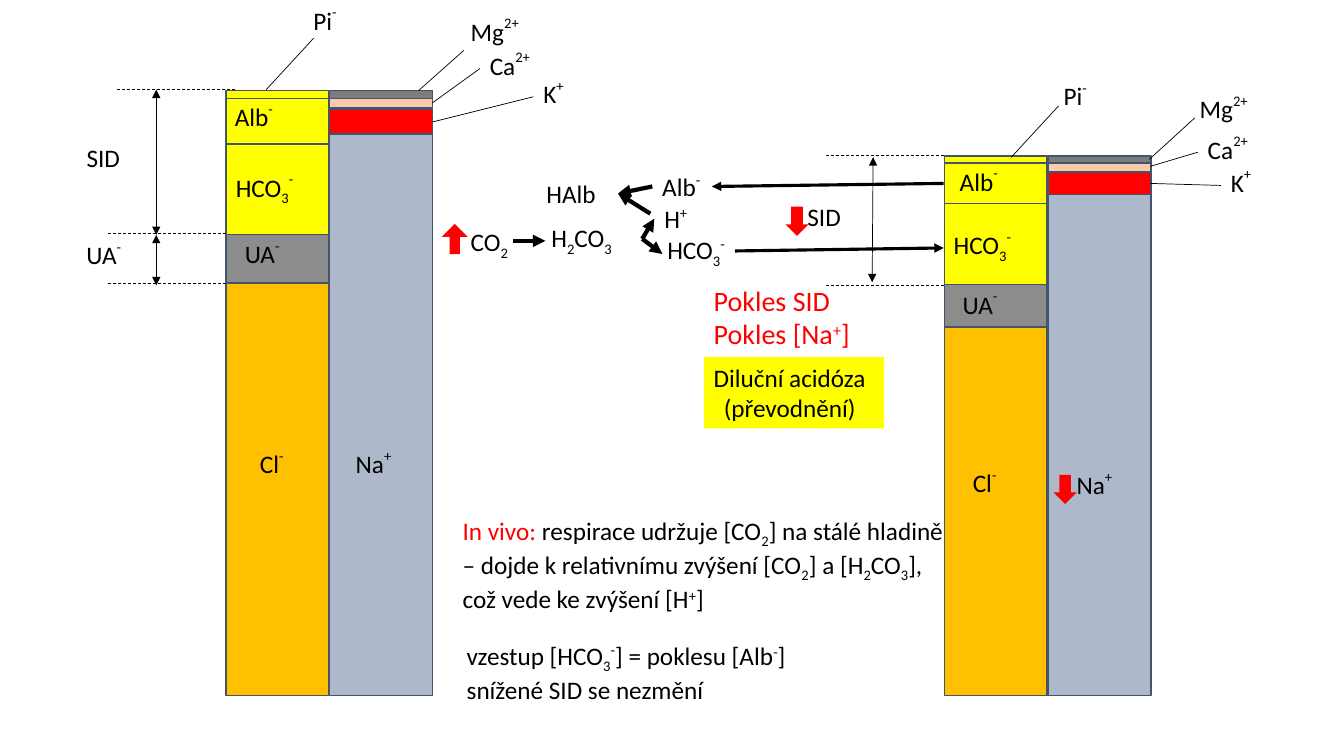
from dataclasses import dataclass

from pptx import Presentation
from pptx.dml.color import RGBColor
from pptx.enum.dml import MSO_LINE
from pptx.enum.shapes import MSO_CONNECTOR, MSO_SHAPE
from pptx.enum.text import MSO_AUTO_SIZE, PP_ALIGN
from pptx.oxml.ns import qn
from pptx.util import Inches, Pt
from lxml import etree

RECTANGLE = MSO_SHAPE.RECTANGLE
DOWN_ARROW = MSO_SHAPE.DOWN_ARROW
STRAIGHT = MSO_CONNECTOR.STRAIGHT
DASH = MSO_LINE.DASH
FIT_SHAPE = MSO_AUTO_SIZE.SHAPE_TO_FIT_TEXT
LEFT, CENTER = PP_ALIGN.LEFT, PP_ALIGN.CENTER


@dataclass(frozen=True)
class Theme:
    font: str = "Calibri"
    body: float = 18
    large: float = 20
    black: str = "000000"
    red: str = "FF0000"
    yellow: str = "FFFF00"
    orange: str = "FFC000"
    blue: str = "ADB9CA"
    peach: str = "F8CBAD"
    dark_gray: str = "7C7C7C"
    gray: str = "8C8C8C"
    outline: str = "44546A"
    thin: float = 0.5
    medium: float = 2.25
    thick: float = 3


@dataclass(frozen=True)
class Band:
    side: int  # 0 = anions, 1 = cations
    top: float
    height: float
    color: str


@dataclass(frozen=True)
class Column:
    left: float
    scale: float


@dataclass(frozen=True)
class Label:
    text: str
    left: float
    top: float
    width: float
    height: float = 0.5
    rise: int = 50
    wrap: bool = False


@dataclass(frozen=True)
class Line:
    start: tuple[float, float]
    end: tuple[float, float]
    width: float = 0.5
    dashed: bool = False
    head: bool = False
    tail: bool = False


THEME = Theme()
BAND_WIDTH = 1.02
BASE = 6.9
COLUMNS = [Column(2.24, 1), Column(9.365, 0.892)]
BANDS = [
    Band(1, 1.33, 5.57, THEME.blue), Band(1, 1.08, 0.25, THEME.red),
    Band(1, 0.96, 0.11, THEME.peach), Band(1, 0.9, 0.08, THEME.dark_gray),
    Band(0, 2.81, 4.09, THEME.orange), Band(0, 0.9, 0.1, THEME.yellow),
    Band(0, 2.32, 0.48, THEME.gray), Band(0, 1.43, 0.9, THEME.yellow),
    Band(0, 0.98, 0.45, THEME.yellow),
]

# Text parts are split by "|": _ subscript, ^ superscript, ~ low superscript, ! red
ION_WIDTHS = {"Pi|^-": 0.56, "Mg|^2+": 0.91, "Ca|^2+": 0.81, "K|^+": 0.57, "Na|^+": 0.72,
              "Cl|^-": 0.59, "UA|^-": 0.76, "HCO|_3|^-": 1.1, "Alb|^-": 0.78, "SID": 0.75}
ION_PLACES = {
    "Pi|^-": [(3.01, -0.02), (10.45, 0.73)],
    "Mg|^2+": [(4.57, 0.09), (11.8, 0.86)],
    "Ca|^2+": [(4.76, 0.43), (11.88, 1.26)],
    "K|^+": [(5.29, 0.71), (12.11, 1.59)],
    "Na|^+": [(3.43, 4.38), (10.58, 4.59)],
    "Cl|^-": [(2.48, 4.38), (9.55, 4.57)],
    "UA|^-": [(2.33, 2.3), (0.76, 2.31), (9.45, 2.8)],
    "HCO|_3|^-": [(2.24, 1.64), (9.36, 2.21)],
    "Alb|^-": [(2.23, 0.94), (9.42, 1.58)],
    "SID": [(0.76, 1.36), (7.91, 1.95)],
}
REACTION_LABELS = [
    Label("CO|_2", 4.57, 2.2, 0.88, 0.4, 42, True),
    Label("HCO|_3|^-", 6.52, 2.28, 0.96, 0.4, 42, True),
    Label("H|^+", 6.49, 1.97, 1, 0.4, 42, True),
    Label("Alb|^-", 6.47, 1.65, 1, 0.4, 42, True),
    Label("HAlb", 5.32, 1.72, 0.82, 0.4, 42, True),
    Label("H|_2|CO|_3", 5.37, 2.16, 1, 0.4, 42, True),
]
NOTES = [
    Label("!In vivo: |respirace udržuje [CO|_2|] na stálé hladině – dojde k relativnímu zvýšení "
          "[CO|_2|] a [H|_2|CO|_3|], což vede ke zvýšení [H|~+|]", 4.49, 5.06, 4.99, 1.01, wrap=True),
    Label("vzestup [HCO|_3|^-|] = poklesu [Alb|~-|]\nsnížené SID se nezmění",
          4.53, 6.3, 4.62, 0.71, 40, True),
]

LEADERS = [
    Line((4.6, 0.5), (4.15, 0.9)), Line((4.76, 0.68), (4.29, 1.02)),
    Line((5.29, 0.96), (4.29, 1.21)), Line((2.64, 0.89), (3.11, 0.38)),
    Line((11.85, 1.17), (11.4, 1.58)), Line((11.88, 1.51), (11.41, 1.65)),
    Line((12.11, 1.84), (11.41, 1.82)), Line((10.03, 1.56), (10.5, 1.05)),
]
GUIDES = [Line((right, y), (right - 1.18, y), dashed=True) for right, y in
          [(2.24, 2.32), (2.33, 0.89), (2.24, 2.81), (9.36, 2.83), (9.36, 1.54)]]
SPANS = [Line(start, end, head=True, tail=True) for start, end in
         [((1.55, 0.89), (1.55, 2.33)), ((1.55, 2.33), (1.55, 2.83)), ((8.66, 1.56), (8.65, 2.8))]]
REACTION_ARROWS = [Line(start, end, THEME.thick, tail=True) for start, end in
                   [((6.37, 2.37), (6.49, 2.17)), ((6.37, 2.37), (6.57, 2.52)),
                    ((6.47, 1.85), (6.13, 1.92)), ((6.45, 2.12), (6.13, 1.92)),
                    ((5.09, 2.39), (5.41, 2.39))]]
EXCHANGE_ARROWS = [Line((9.36, 1.82), (7.06, 1.85), THEME.medium, tail=True),
                   Line((9.36, 2.46), (7.29, 2.49), THEME.medium, head=True)]


def add_text(slide, label: Label, *, size: float = THEME.body, color: str = THEME.black,
             fill: str | None = None, aligns: tuple = (LEFT, LEFT)) -> None:
    box = slide.shapes.add_textbox(*map(Inches, (label.left, label.top, label.width, label.height)))
    if fill:
        box.fill.solid()
        box.fill.fore_color.rgb = RGBColor.from_string(fill)
    frame = box.text_frame
    frame.word_wrap = label.wrap
    frame.auto_size = FIT_SHAPE
    baselines = {"_": -25, "^": label.rise, "~": 30}
    for index, text in enumerate(label.text.split("\n")):
        paragraph = frame.add_paragraph() if index else frame.paragraphs[0]
        paragraph.alignment = aligns[index]
        for part in text.split("|"):
            mark = part[0]
            run = paragraph.add_run()
            run.text = part[1:] if mark in "_^~!" else part
            run.font.name = THEME.font
            run.font.size = Pt(size)
            run.font.color.rgb = RGBColor.from_string(THEME.red if mark == "!" else color)
            if mark in baselines:
                run._r.get_or_add_rPr().set("baseline", str(baselines[mark] * 1000))


def add_block(slide, kind, left: float, top: float, width: float, height: float,
              fill: str, outline: str | None = None):
    shape = slide.shapes.add_shape(kind, *map(Inches, (left, top, width, height)))
    shape.shadow.inherit = False
    shape.fill.solid()
    shape.fill.fore_color.rgb = RGBColor.from_string(fill)
    if outline:
        shape.line.color.rgb = RGBColor.from_string(outline)
        shape.line.width = Pt(1)
    else:
        shape.line.fill.background()
    return shape


def add_line(slide, line: Line) -> None:
    connector = slide.shapes.add_connector(STRAIGHT, *map(Inches, line.start + line.end))
    connector.line.color.rgb = RGBColor.from_string(THEME.black)
    connector.line.width = Pt(line.width)
    if line.dashed:
        connector.line.dash_style = DASH
    outline = connector.line._get_or_add_ln()
    for tag, shown in (("a:headEnd", line.head), ("a:tailEnd", line.tail)):
        if shown:
            etree.SubElement(outline, qn(tag), type="triangle")
    etree.SubElement(connector._element.spPr, qn("a:effectLst"))


def main() -> None:
    presentation = Presentation()
    presentation.slide_width, presentation.slide_height = Inches(13.33), Inches(7.5)
    slide = presentation.slides.add_slide(presentation.slide_layouts[6])

    # Ion columns, the right one shortened towards the common base
    for column in COLUMNS:
        for band in BANDS:
            add_block(slide, RECTANGLE, column.left + band.side * 1.03,
                      BASE - (BASE - band.top) * column.scale, BAND_WIDTH,
                      band.height * column.scale, band.color, THEME.outline)

    # Ion names, leaders, guides and spans
    for text, places in ION_PLACES.items():
        for left, top in places:
            add_text(slide, Label(text, left, top, ION_WIDTHS[text]))
    for line in LEADERS + GUIDES + SPANS:
        add_line(slide, line)

    # Diagnosis
    add_text(slide, Label("Diluční acidóza\n(převodnění)", 6.98, 3.54, 1.79, 0.71),
             fill=THEME.yellow, aligns=(LEFT, CENTER))
    add_text(slide, Label("Pokles SID\nPokles [Na|~+|]", 6.98, 2.76, 1.64, 0.77),
             size=THEME.large, color=THEME.red)

    # Red change arrows
    for left, top in [(7.79, 2.05), (10.45, 4.71)]:
        add_block(slide, DOWN_ARROW, left, top, 0.23, 0.29, THEME.red)
    rise_arrow = add_block(slide, DOWN_ARROW, 4.38, 2.22, 0.26, 0.3, THEME.red)
    rise_arrow.rotation = 180
    rise_arrow.adjustments[0] = 0.4

    # Buffer reactions and notes
    for label in REACTION_LABELS + NOTES:
        add_text(slide, label)
    for line in REACTION_ARROWS + EXCHANGE_ARROWS:
        add_line(slide, line)

    presentation.save("out.pptx")


if __name__ == "__main__":
    main()
